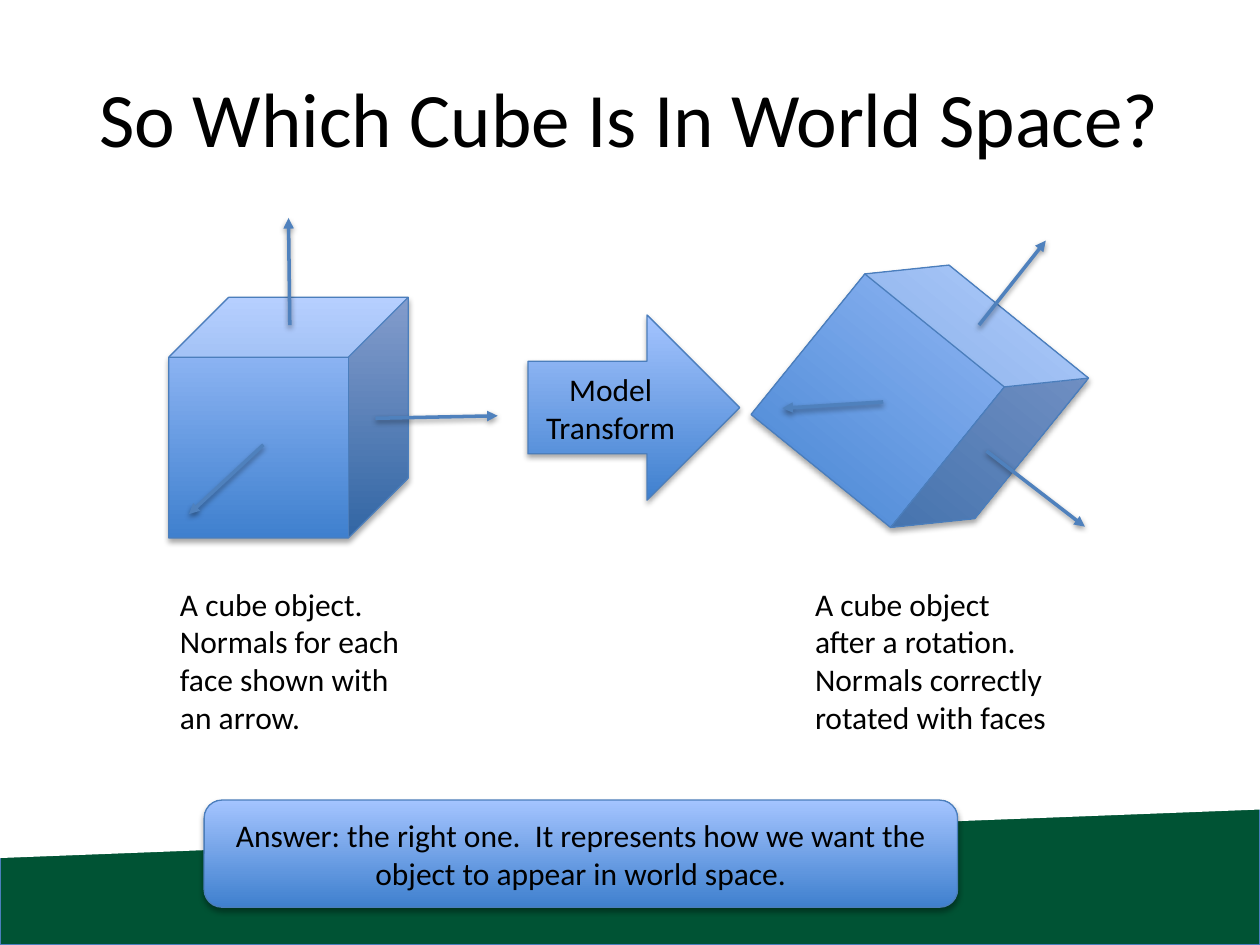
import dataclasses

import pptx
import pptx.dml.color
import pptx.enum.shapes
import pptx.enum.text
import pptx.oxml
import pptx.oxml.ns
import pptx.util

Inches = pptx.util.Inches
Pt = pptx.util.Pt
RGBColor = pptx.dml.color.RGBColor
Shape = pptx.enum.shapes.MSO_SHAPE
Align = pptx.enum.text.PP_ALIGN
Anchor = pptx.enum.text.MSO_ANCHOR

BLACK = RGBColor(0x00, 0x00, 0x00)
WHITE = RGBColor(0xFF, 0xFF, 0xFF)
GREEN = RGBColor(0x00, 0x53, 0x34)
DEEP_BLUE = RGBColor(0x3F, 0x80, 0xCE)
PALE_BLUE = RGBColor(0xA4, 0xC4, 0xFF)
OUTLINE = RGBColor(0x4B, 0x7E, 0xBC)
ARROW_BLUE = RGBColor(0x4F, 0x81, 0xBD)
FONT = "Calibri"


@dataclasses.dataclass(frozen=True)
class Area:
    left: float
    top: float
    width: float
    height: float

    def lengths(self) -> tuple:
        return tuple(Inches(value) for value in dataclasses.astuple(self))


@dataclasses.dataclass(frozen=True)
class Block:
    """A gradient-filled shape with optional centred text."""
    kind: Shape
    area: Area
    text: str = ""
    rotation: float = 0


@dataclasses.dataclass(frozen=True)
class Normal:
    """An arrow standing out of a cube face."""
    start: tuple[float, float]
    end: tuple[float, float]


@dataclasses.dataclass(frozen=True)
class Caption:
    area: Area
    text: str


ANSWER = Block(
    Shape.ROUNDED_RECTANGLE, Area(1.62, 6.35, 5.98, 0.85),
    "Answer: the right one.  It represents how we want the object to appear in world space.")
TRANSFORM = Block(Shape.RIGHT_ARROW, Area(4.19, 2.5, 1.68, 1.47), "Model\nTransform")
CUBE = Block(Shape.CUBE, Area(1.34, 2.36, 1.9, 1.91))
ROTATED_CUBE = Block(Shape.CUBE, Area(6.35, 2.19, 1.9, 1.91), rotation=39)

CUBE_NORMALS = [
    Normal((2.3, 2.58), (2.29, 1.73)),
    Normal((2.98, 3.32), (3.95, 3.3)),
    Normal((2.09, 3.53), (1.5, 4.08)),
]
ROTATED_NORMALS = [
    Normal((7.77, 2.58), (8.3, 1.91)),
    Normal((7.83, 3.58), (8.61, 4.18)),
    Normal((7.01, 3.19), (6.21, 3.24)),
]
CAPTIONS = [
    Caption(Area(1.33, 4.59, 2.12, 1.31),
            "A cube object.\nNormals for each face shown with an arrow."),
    Caption(Area(6.37, 4.59, 2.12, 1.31),
            "A cube object after a rotation.\nNormals correctly rotated with faces"),
]


def add_shadow(shape, distance: float, opacity: int) -> None:
    """Append a downward shadow; call it after fill and line are set."""
    shape._element.spPr.append(pptx.oxml.parse_xml(
        f'<a:effectLst {pptx.oxml.ns.nsdecls("a")}>'
        f'<a:outerShdw blurRad="{Pt(3.15)}" dist="{Pt(distance)}" dir="5400000" rotWithShape="0">'
        f'<a:srgbClr val="{BLACK}"><a:alpha val="{opacity * 1000}"/></a:srgbClr>'
        '</a:outerShdw></a:effectLst>'))


def write(frame, text: str, size: float, align: Align) -> None:
    frame.text = text
    frame.word_wrap = True
    for paragraph in frame.paragraphs:
        paragraph.alignment = align
        for span in paragraph.runs:
            span.font.name = FONT
            span.font.size = Pt(size)
            span.font.color.rgb = BLACK


def outline_with_shadow(shape) -> None:
    shape.line.color.rgb = OUTLINE
    shape.line.width = Pt(0.75)
    add_shadow(shape, 1.8, 35)


def draw_ground(page) -> None:
    """Draw the green band and the white slanted shape that trims its top."""
    band = page.shapes.add_shape(Shape.RECTANGLE, *Area(0, 5.61, 10, 1.89).lengths())
    band.fill.solid()
    band.fill.fore_color.rgb = GREEN
    outline_with_shadow(band)

    slant = page.shapes.add_shape(Shape.PARALLELOGRAM, *Area(3.84, 0.65, 2.32, 10).lengths())
    slant.rotation = 90
    slant._element.spPr.get_or_add_xfrm().set("flipH", "1")
    slant.adjustments[0] = 0.166
    slant.fill.solid()
    slant.fill.fore_color.rgb = WHITE
    slant.line.fill.background()
    slant.shadow.inherit = False


def draw_block(page, block: Block) -> None:
    shape = page.shapes.add_shape(block.kind, *block.area.lengths())
    shape.rotation = block.rotation
    shape.fill.gradient()
    shape.fill.gradient_angle = 90
    for stop, color in zip(shape.fill.gradient_stops, (DEEP_BLUE, PALE_BLUE)):
        stop.color.rgb = color
    outline_with_shadow(shape)
    if block.text:
        shape.text_frame.vertical_anchor = Anchor.MIDDLE
        write(shape.text_frame, block.text, 18, Align.CENTER)


def draw_normal(page, normal: Normal) -> None:
    arrow = page.shapes.add_connector(
        pptx.enum.shapes.MSO_CONNECTOR.STRAIGHT,
        *(Inches(value) for value in normal.start + normal.end))
    arrow.line.color.rgb = ARROW_BLUE
    arrow.line.width = Pt(2)
    arrow.line._get_or_add_ln().append(pptx.oxml.parse_xml(
        f'<a:tailEnd {pptx.oxml.ns.nsdecls("a")} type="triangle"/>'))
    add_shadow(arrow, 1.6, 38)


def draw_caption(page, caption: Caption) -> None:
    box = page.shapes.add_textbox(*caption.area.lengths())
    write(box.text_frame, caption.text, 18, Align.LEFT)
    box.text_frame.auto_size = pptx.enum.text.MSO_AUTO_SIZE.SHAPE_TO_FIT_TEXT


def main() -> None:
    deck = pptx.Presentation()
    deck.slide_width, deck.slide_height = Inches(10), Inches(7.5)
    page = deck.slides.add_slide(deck.slide_layouts.get_by_name("Title Only"))

    draw_ground(page)
    title = page.shapes.title
    title.left, title.top, title.width, title.height = Area(0.5, 0.3, 9, 1.25).lengths()
    title.text_frame.vertical_anchor = Anchor.MIDDLE
    write(title.text_frame, "So Which Cube Is In World Space?", 44, Align.CENTER)

    draw_block(page, ANSWER)
    for cube, normals in ((CUBE, CUBE_NORMALS), (ROTATED_CUBE, ROTATED_NORMALS)):
        draw_block(page, cube)
        for normal in normals:
            draw_normal(page, normal)
    for caption in CAPTIONS:
        draw_caption(page, caption)
    draw_block(page, TRANSFORM)
    deck.save("out.pptx")


if __name__ == "__main__":
    main()
